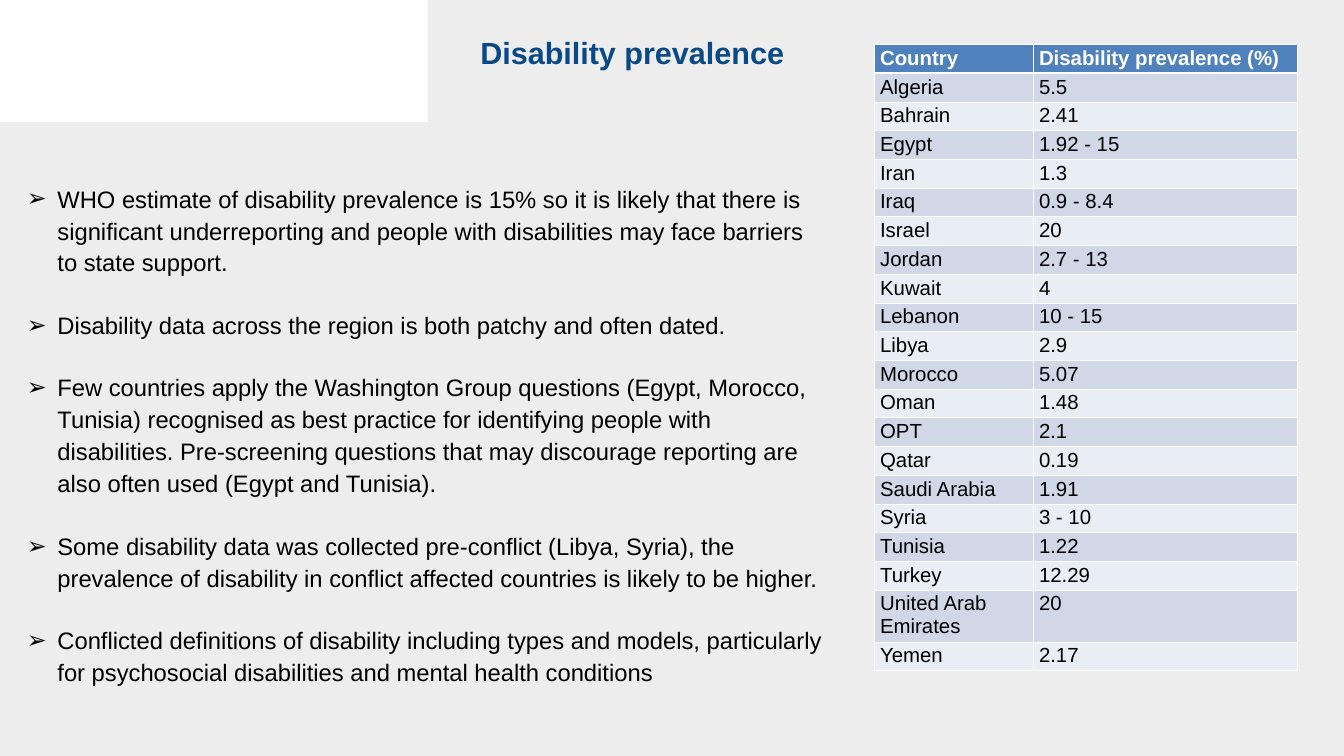
from lxml.etree import SubElement
from pptx import Presentation
from pptx.dml.color import RGBColor
from pptx.oxml.ns import qn
from pptx.util import Inches, Pt

WHITE = RGBColor(0xFF, 0xFF, 0xFF)
BLACK = RGBColor(0, 0, 0)
PALE_GREY = RGBColor(0xED, 0xED, 0xED)
NAVY = RGBColor(0x09, 0x49, 0x85)
HEADER_BLUE = RGBColor(0x4F, 0x81, 0xBD)
BAND_DARK = RGBColor(0xD0, 0xD8, 0xE8)
BAND_LIGHT = RGBColor(0xE9, 0xED, 0xF4)

PREVALENCE = [
    ("Country", "Disability prevalence (%)"),
    ("Algeria", "5.5"),
    ("Bahrain", "2.41"),
    ("Egypt", "1.92 - 15"),
    ("Iran", "1.3"),
    ("Iraq", "0.9 - 8.4"),
    ("Israel", "20"),
    ("Jordan", "2.7 - 13"),
    ("Kuwait", "4"),
    ("Lebanon", "10 - 15"),
    ("Libya", "2.9"),
    ("Morocco", "5.07"),
    ("Oman", "1.48"),
    ("OPT", "2.1"),
    ("Qatar", "0.19"),
    ("Saudi Arabia", "1.91"),
    ("Syria", "3 - 10"),
    ("Tunisia", "1.22"),
    ("Turkey", "12.29"),
    ("United Arab Emirates", "20"),
    ("Yemen", "2.17"),
]
FINDINGS = [
    "WHO estimate of disability prevalence is 15% so it is likely that there is "
    "significant underreporting and people with disabilities may face barriers "
    "to state support.",
    "Disability data across the region is both patchy and often dated.",
    "Few countries apply the Washington Group questions (Egypt, Morocco, Tunisia) "
    "recognised as best practice for identifying people with disabilities. "
    "Pre-screening questions that may discourage reporting are also often used "
    "(Egypt and Tunisia).",
    "Some disability data was collected pre-conflict (Libya, Syria), the "
    "prevalence of disability in conflict affected countries is likely to be higher.",
    "Conflicted definitions of disability including types and models, particularly "
    "for psychosocial disabilities and mental health conditions",
]


def add_run(paragraph, text, size, color, bold=False):
    run = paragraph.add_run()
    run.text = text
    run.font.name = "Arial"
    run.font.size = Pt(size)
    run.font.bold = bold
    run.font.color.rgb = color


def add_borders(cell, bottom_width):
    """Draw white lines around a cell, with its own width at the bottom."""
    properties = cell._tc.get_or_add_tcPr()
    for side, width in (("L", 1), ("R", 1), ("T", 1), ("B", bottom_width)):
        line = SubElement(properties, qn(f"a:ln{side}"), w=str(Pt(width)))
        SubElement(SubElement(line, qn("a:solidFill")), qn("a:srgbClr"), val=str(WHITE))


prs = Presentation()
prs.slide_width, prs.slide_height = Inches(21.99), Inches(12.37)
slide = prs.slides.add_slide(prs.slide_layouts[6])
slide.background.fill.solid()
slide.background.fill.fore_color.rgb = PALE_GREY

# White tab in the top left corner
outline = slide.shapes.build_freeform(0, 0, scale=Inches(1))
outline.add_line_segments([
    (6.92, 0), (6.96, 0.02), (7, 0.06), (7.47, 0.87), (7.47, 0.91),
    (6.99, 1.79), (6.95, 1.82), (6.93, 1.83), (0, 1.83),
])
tab = outline.convert_to_shape()
tab.shadow.inherit = False
tab.fill.solid()
tab.fill.fore_color.rgb = WHITE
tab.line.fill.background()

# Prevalence by country
table = slide.shapes.add_table(
    len(PREVALENCE), 2, Inches(14.3), Inches(0.73), Inches(6.93), Inches(10.3)
).table
table.columns[0].width = Inches(2.6)
table.columns[1].width = Inches(4.33)
for row_index, values in enumerate(PREVALENCE):
    is_header = row_index == 0
    band = HEADER_BLUE if is_header else BAND_DARK if row_index % 2 else BAND_LIGHT
    two_lines = values[0] == "United Arab Emirates"
    table.rows[row_index].height = Inches(0.85 if two_lines else 0.47)
    for column_index, value in enumerate(values):
        cell = table.cell(row_index, column_index)
        cell.margin_top = cell.margin_bottom = Inches(0.04)
        add_borders(cell, 3 if is_header else 1)
        cell.fill.solid()
        cell.fill.fore_color.rgb = band
        add_run(cell.text_frame.paragraphs[0], value, 24,
                WHITE if is_header else BLACK, is_header)

title = slide.shapes.add_textbox(Inches(7.76), Inches(0.51), Inches(6.3), Inches(0.71))
title.text_frame.word_wrap = True
add_run(title.text_frame.paragraphs[0], "Disability prevalence", 36, NAVY, True)

# Findings
findings = slide.shapes.add_textbox(
    Inches(0.44), Inches(2.96), Inches(13.07), Inches(8.03)
).text_frame
findings.word_wrap = True
findings.margin_left = findings.margin_right = 0
findings.margin_top = findings.margin_bottom = 0
for index, finding in enumerate(FINDINGS):
    paragraph = findings.add_paragraph() if index else findings.paragraphs[0]
    bullet = paragraph._p.get_or_add_pPr()
    bullet.set("marL", str(Inches(0.5)))
    bullet.set("indent", str(-Inches(0.5)))
    SubElement(bullet, qn("a:buFont"), typeface="Arial")
    SubElement(bullet, qn("a:buChar"), char="➢")
    paragraph.line_spacing = 1.12
    if index:
        paragraph.space_before = Pt(36)
    add_run(paragraph, finding, 28, BLACK)

prs.save("out.pptx")
